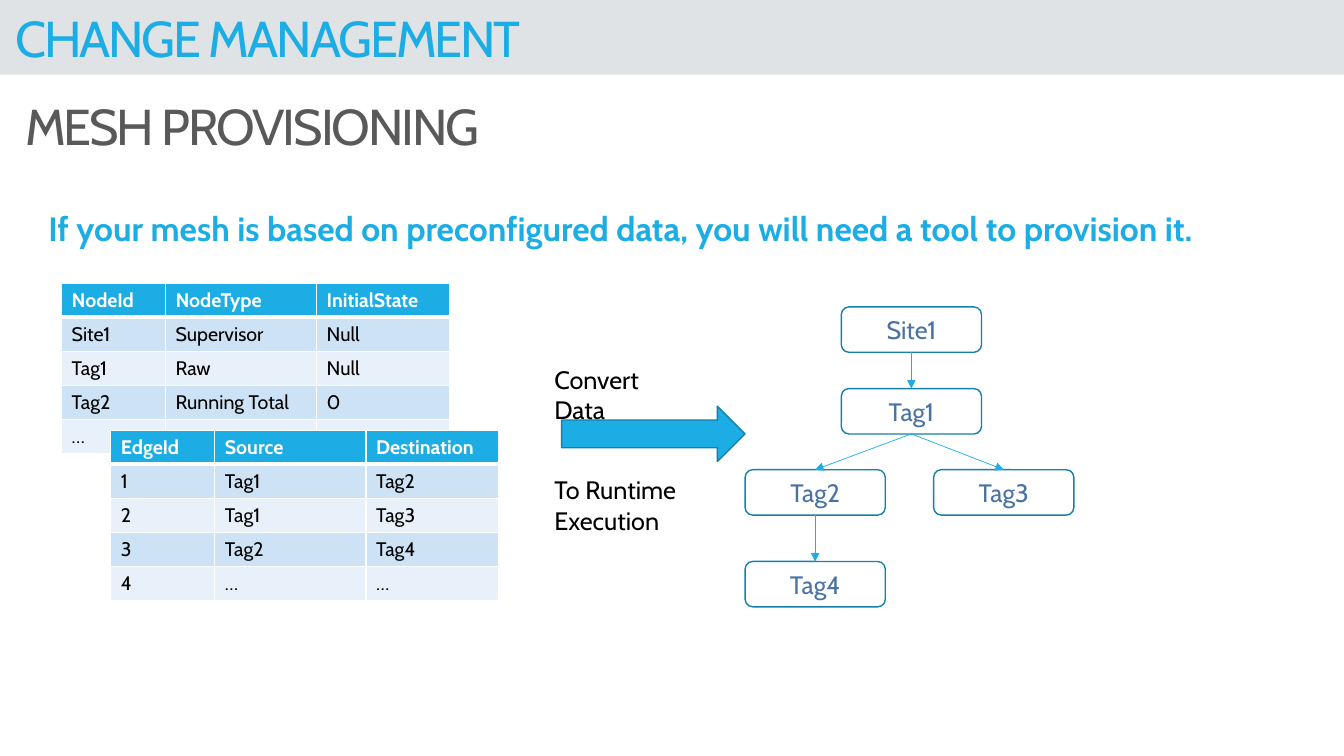
from dataclasses import dataclass

from lxml.etree import SubElement
from pptx import Presentation
from pptx.dml.color import RGBColor
from pptx.enum.shapes import MSO_CONNECTOR as Line, MSO_SHAPE as Shape
from pptx.enum.text import MSO_ANCHOR as Anchor, MSO_AUTO_SIZE as Fit, PP_ALIGN as Align
from pptx.oxml.ns import qn
from pptx.util import Inches, Pt

FONT = "Cabin"
BLUE, EDGE, WHITE, BLACK = "1CADE4", "1580A9", "FFFFFF", "000000"
BANDS = ("E8F1FA", "CDE3F5")
WIDTH, HEIGHT = Inches(13.33), Inches(7.5)
BOTTOM, TOP = 2, 0


@dataclass(frozen=True)
class Box:
    """A place in percent of the slide's width and height."""
    left: float
    top: float
    width: float
    height: float

    def emu(self) -> tuple:
        return x(self.left), y(self.top), x(self.width), y(self.height)


@dataclass(frozen=True)
class Style:
    size: float
    color: str
    bold: bool = False
    align: Align = Align.LEFT
    anchor: Anchor = Anchor.TOP
    spacing: int = 0  # hundredths of a point
    before: float = 0
    margins: tuple = (0.1, 0.05, 0.1, 0.05)


@dataclass(frozen=True)
class Grid:
    left: float
    top: float
    rows: tuple


@dataclass(frozen=True)
class Node:
    name: str
    column: int
    row: int
    parent: str = ""


HEADING = Style(36, BLUE, spacing=-150)
SUBHEADING = Style(36, "595959", spacing=-150)
STATEMENT = Style(24, BLUE, bold=True, before=3, margins=(0.01, 0.04, 0, 0))
LABEL = Style(18, BLACK)
NODE_TEXT = Style(18, "4A73A2", align=Align.CENTER, anchor=Anchor.MIDDLE)

TABLE_COLUMNS, TABLE_ROW = (7.73, 11.25, 9.9), 4.45
TABLES = (
    Grid(4.58, 37.47, (
        ("NodeId", "NodeType", "InitialState"),
        ("Site1", "Supervisor", "Null"),
        ("Tag1", "Raw", "Null"),
        ("Tag2", "Running Total", "0"),
        ("…", "…", "…"))),
    Grid(8.25, 56.93, (
        ("EdgeId", "Source", "Destination"),
        ("1", "Tag1", "Tag2"),
        ("2", "Tag1", "Tag3"),
        ("3", "Tag2", "Tag4"),
        ("4", "…", "…"))),
)

NODE_COLUMNS, NODE_ROWS = (55.44, 62.6, 69.47), (40.6, 51.4, 62.13, 74.27)
NODES = (
    Node("Site1", 1, 0),
    Node("Tag1", 1, 1, "Site1"),
    Node("Tag2", 0, 2, "Tag1"),
    Node("Tag3", 2, 2, "Tag1"),
    Node("Tag4", 0, 3, "Tag2"),
)


def x(share: float) -> int:
    return int(WIDTH * share / 100)


def y(share: float) -> int:
    return int(HEIGHT * share / 100)


def rgb(color: str) -> RGBColor:
    return RGBColor.from_string(color)


def assign(obj, values: dict) -> None:
    for name, value in values.items():
        setattr(obj, name, value)


def write(tf, text: str, style: Style) -> None:
    sides = ("margin_left", "margin_top", "margin_right", "margin_bottom")
    assign(tf, dict(zip(sides, map(Inches, style.margins))))
    assign(tf, {"word_wrap": True, "auto_size": Fit.NONE, "vertical_anchor": style.anchor})
    p = tf.paragraphs[0]
    assign(p, {"alignment": style.align, "space_before": Pt(style.before)})
    r = p.add_run()
    r.text = text
    assign(r.font, {"name": FONT, "size": Pt(style.size), "bold": style.bold})
    r.font.color.rgb = rgb(style.color)
    if style.spacing:
        r._r.get_or_add_rPr().set("spc", str(style.spacing))


def place(sp, box: Box, text: str, style: Style):
    assign(sp, dict(zip(("left", "top", "width", "height"), box.emu())))
    write(sp.text_frame, text, style)
    return sp


def add_text(shapes, box: Box, text: str, style: Style) -> None:
    write(shapes.add_textbox(*box.emu()).text_frame, text, style)


def add_shape(shapes, kind: Shape, box: Box, fill: str, line: str = ""):
    sp = shapes.add_shape(kind, *box.emu())
    sp.shadow.inherit = False
    sp.fill.solid()
    sp.fill.fore_color.rgb = rgb(fill)
    if line:
        sp.line.color.rgb = rgb(line)
        sp.line.width = Pt(1)
    else:
        sp.line.fill.background()
    return sp


def add_border(cell, side: str, width: float) -> None:
    ln = SubElement(cell._tc.get_or_add_tcPr(), qn(f"a:ln{side}"), w=str(Pt(width)))
    SubElement(SubElement(ln, qn("a:solidFill")), qn("a:srgbClr"), val=WHITE)


def add_grid(shapes, grid: Grid) -> None:
    box = Box(grid.left, grid.top, sum(TABLE_COLUMNS), TABLE_ROW * len(grid.rows))
    table = shapes.add_table(len(grid.rows), len(TABLE_COLUMNS), *box.emu()).table
    for column, width in zip(table.columns, TABLE_COLUMNS):
        column.width = x(width)
    for i, row in enumerate(grid.rows):
        table.rows[i].height = y(TABLE_ROW)
        header = i == 0
        for j, text in enumerate(row):
            cell = table.cell(i, j)
            p = cell.text_frame.paragraphs[0]
            r = p.add_run()
            r.text = text
            assign(r.font, {"name": FONT, "size": Pt(14), "bold": header})
            r.font.color.rgb = rgb(WHITE if header else BLACK)
            for side, width in zip("LRTB", (1, 1, 3 if i == 1 else 1, 3 if header else 1)):
                add_border(cell, side, width)
            cell.fill.solid()
            cell.fill.fore_color.rgb = rgb(BLUE if header else BANDS[i % 2])


def add_arrow(shapes, parent, child) -> None:
    line = shapes.add_connector(Line.STRAIGHT, 0, 0, 0, 0)
    line.begin_connect(parent, BOTTOM)
    line.end_connect(child, TOP)
    line.line.color.rgb = rgb(BLUE)
    line.line.width = Pt(0.5)
    SubElement(line.line._get_or_add_ln(), qn("a:tailEnd"), type="triangle")
    SubElement(line._element.spPr, qn("a:effectLst"))


def add_tree(shapes) -> None:
    drawn = {}
    for node in NODES:
        box = Box(NODE_COLUMNS[node.column], NODE_ROWS[node.row], 10.43, 6)
        sp = add_shape(shapes, Shape.ROUNDED_RECTANGLE, box, WHITE, EDGE)
        write(sp.text_frame, node.name, NODE_TEXT)
        drawn[node.name] = sp
    for node in NODES:
        if node.parent:
            add_arrow(shapes, drawn[node.parent], drawn[node.name])


def main() -> None:
    prs = Presentation()
    assign(prs, {"slide_width": WIDTH, "slide_height": HEIGHT})
    shapes = prs.slides.add_slide(prs.slide_layouts[1]).shapes
    title = place(shapes.title, Box(0.38, 0.27, 99.5, 9.47), "CHANGE MANAGEMENT", HEADING)
    band = add_shape(shapes, Shape.RECTANGLE, Box(0, 0, 100, 9.87), "DFE3E5")
    title._element.addprevious(band._element)
    body = place(shapes.placeholders[1], Box(3.53, 26.93, 88.22, 6),
                 "If your mesh is based on preconfigured data, you will need a tool to provision it.",
                 STATEMENT)
    pPr = body.text_frame.paragraphs[0]._p.get_or_add_pPr()
    pPr.set("marL", "0")
    pPr.set("indent", "0")
    SubElement(pPr, qn("a:buNone"))
    add_text(shapes, Box(1.13, 11.87, 97.6, 9.47), "MESH PROVISIONING", SUBHEADING)
    for grid in TABLES:
        add_grid(shapes, grid)
    add_tree(shapes)
    add_shape(shapes, Shape.RIGHT_ARROW, Box(41.79, 53.73, 13.65, 7.33), BLUE, EDGE)
    add_text(shapes, Box(40.51, 47.47, 11.63, 5.33), "Convert Data", LABEL)
    add_text(shapes, Box(40.51, 62.13, 11.63, 9.47), "To Runtime Execution", LABEL)
    prs.save("out.pptx")


if __name__ == "__main__":
    main()
